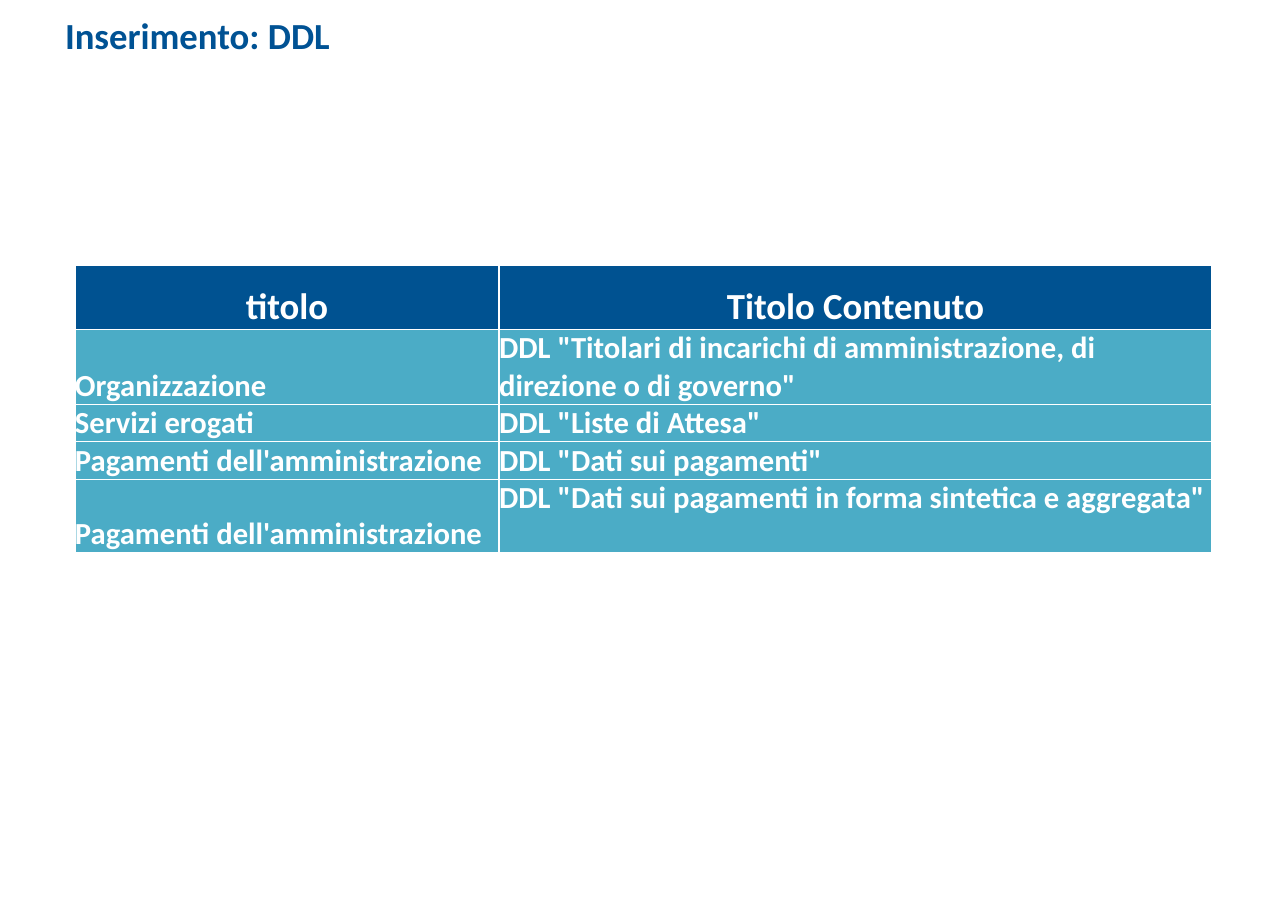
from lxml.etree import SubElement
from pptx import Presentation
from pptx.dml.color import RGBColor
from pptx.enum.text import MSO_ANCHOR, MSO_AUTO_SIZE, PP_ALIGN
from pptx.oxml.ns import qn
from pptx.util import Inches, Pt

WHITE = "FFFFFF"
TITLE_BLUE = "005294"
HEADER_BLUE = "005291"
ROW_TEAL = "4BACC6"

ROWS = [
    ("titolo", "Titolo Contenuto"),
    ("Organizzazione",
     'DDL "Titolari di incarichi di amministrazione, di direzione o di governo"'),
    ("Servizi erogati", 'DDL "Liste di Attesa"'),
    ("Pagamenti dell'amministrazione", 'DDL "Dati sui pagamenti"'),
    ("Pagamenti dell'amministrazione",
     'DDL "Dati sui pagamenti in forma sintetica e aggregata"'),
]
COLUMN_WIDTHS = (3.85, 6.47)
ROW_HEIGHTS = (0.58, 0.67, 0.33, 0.33, 0.67)


def rgb(value):
    return RGBColor.from_string(value)


class SlideBuilder:
    """Holds the slide and its font, and adds styled elements."""

    def __init__(self, slide, font="Calibri"):
        self.slide = slide
        self.font = font

    def add_text(self, tf, text, size, color, align=PP_ALIGN.LEFT):
        p = tf.paragraphs[0]
        p.alignment = align
        r = p.add_run()
        r.text = text
        r.font.name = self.font
        r.font.size = Pt(size)
        r.font.bold = True
        r.font.color.rgb = rgb(color)

    def title(self, text, left, top, width, height):
        sp = self.slide.shapes.title
        sp.left, sp.top = Inches(left), Inches(top)
        sp.width, sp.height = Inches(width), Inches(height)
        tf = sp.text_frame
        tf.word_wrap = True
        tf.auto_size = MSO_AUTO_SIZE.NONE
        tf.vertical_anchor = MSO_ANCHOR.TOP
        tf.margin_left, tf.margin_right = Inches(0.59), Inches(0.24)
        tf.margin_top, tf.margin_bottom = Inches(0.12), Inches(0.15)
        self.add_text(tf, text, 24, TITLE_BLUE)

    def borders(self, cell, color, width):
        tc_pr = cell._tc.get_or_add_tcPr()
        for side in ("a:lnL", "a:lnR", "a:lnT", "a:lnB"):
            line = SubElement(tc_pr, qn(side), w=str(Pt(width)))
            fill = SubElement(line, qn("a:solidFill"))
            SubElement(fill, qn("a:srgbClr"), val=color)

    def cell(self, cell, text, header):
        cell.margin_left = cell.margin_right = 0
        cell.margin_top = cell.margin_bottom = 0
        cell.vertical_anchor = MSO_ANCHOR.BOTTOM
        self.borders(cell, WHITE, 1)
        cell.fill.solid()
        cell.fill.fore_color.rgb = rgb(HEADER_BLUE if header else ROW_TEAL)
        align = PP_ALIGN.CENTER if header else PP_ALIGN.LEFT
        self.add_text(cell.text_frame, text, 24 if header else 20, WHITE, align)

    def table(self, rows, left, top, widths, heights):
        frame = self.slide.shapes.add_table(
            len(rows), len(widths), Inches(left), Inches(top),
            Inches(sum(widths)), Inches(sum(heights)))
        table = frame.table
        table.horz_banding = False
        for column, width in zip(table.columns, widths):
            column.width = Inches(width)
        for i, (row, height) in enumerate(zip(rows, heights)):
            table.rows[i].height = Inches(height)
            for j, text in enumerate(row):
                self.cell(table.cell(i, j), text, header=i == 0)
        return table


def main():
    prs = Presentation()
    prs.slide_width, prs.slide_height = Inches(11.69), Inches(8.27)
    s = SlideBuilder(prs.slides.add_slide(prs.slide_layouts[5]))
    s.title("Inserimento: DDL", 0, 0, 11.69, 0.68)
    table = s.table(ROWS, 0.68, 2.41, COLUMN_WIDTHS, ROW_HEIGHTS)
    table.cell(len(ROWS) - 1, 1).vertical_anchor = MSO_ANCHOR.TOP
    prs.save("out.pptx")


if __name__ == "__main__":
    main()
